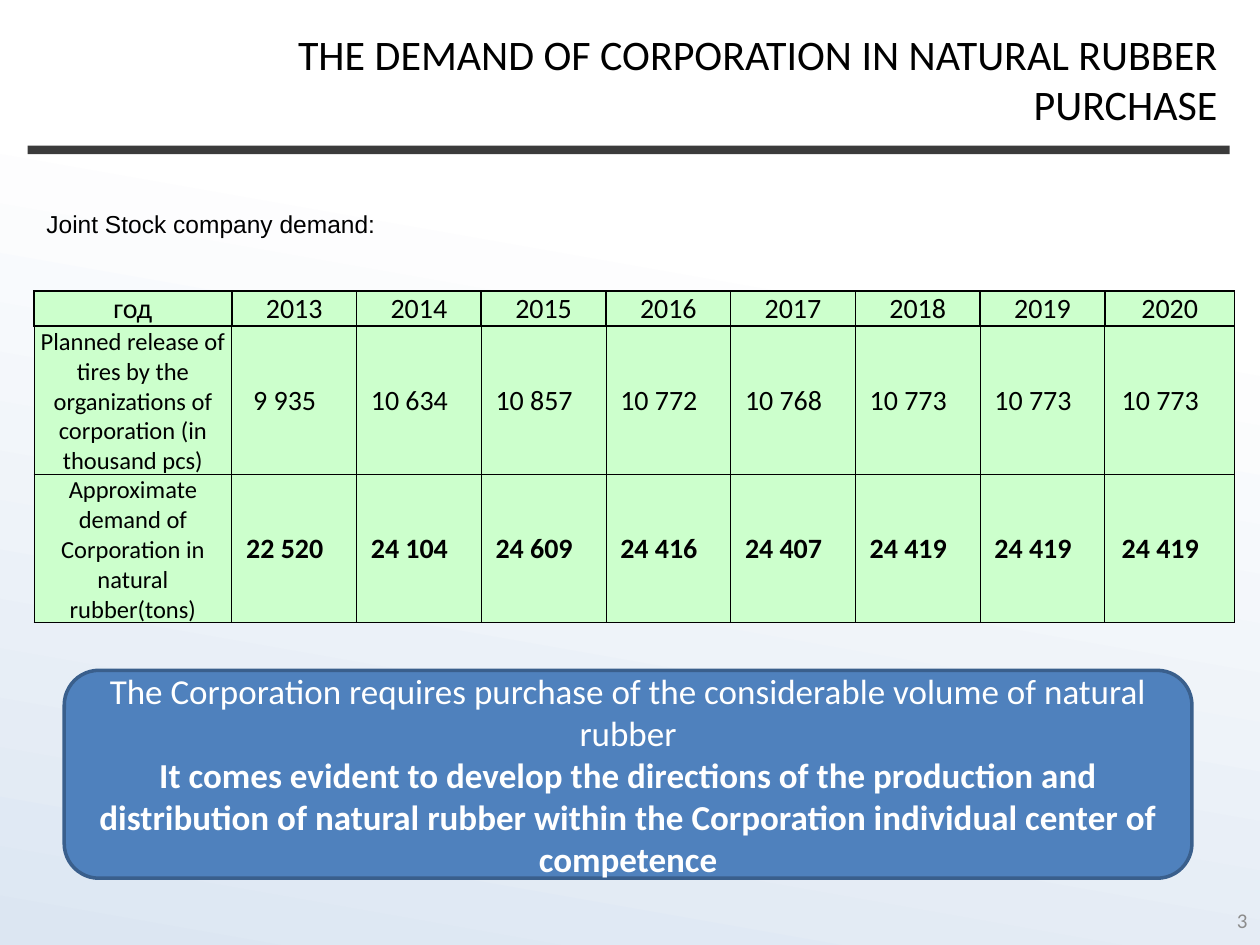
from lxml.etree import SubElement
from pptx import Presentation
from pptx.dml.color import RGBColor
from pptx.enum.shapes import MSO_CONNECTOR, MSO_SHAPE
from pptx.enum.text import MSO_ANCHOR, PP_ALIGN
from pptx.oxml.ns import qn
from pptx.util import Inches, Pt

BLACK = RGBColor(0x00, 0x00, 0x00)
WHITE = RGBColor(0xFF, 0xFF, 0xFF)
GREY = RGBColor(0x8C, 0x8C, 0x8C)
PALE_BLUE = RGBColor(0xDC, 0xE6, 0xF2)
GREEN = RGBColor(0xCC, 0xFF, 0xCC)
BLUE = RGBColor(0x4F, 0x81, 0xBD)
DARK_BLUE = RGBColor(0x3A, 0x5F, 0x8C)

# Content
TITLE = "THE DEMAND OF CORPORATION IN NATURAL RUBBER PURCHASE"
SUBTITLE = "Joint Stock company demand:"
YEARS = ["год"] + [str(year) for year in range(2013, 2021)]
RELEASE = ["Planned release of tires by the organizations of corporation (in thousand pcs)",
           "9 935", "10 634", "10 857", "10 772", "10 768", "10 773", "10 773", "10 773"]
DEMAND = ["Approximate demand of Corporation in natural rubber(tons)",
          "22 520", "24 104", "24 609", "24 416", "24 407", "24 419", "24 419", "24 419"]
EMPTY = [""] * len(YEARS)
CONCLUSIONS = [
    ("The Corporation requires purchase of the considerable volume of natural rubber", False),
    ("It comes evident to develop the directions of the production and distribution of "
     "natural rubber within the Corporation individual center of competence", True),
]
# Each row: texts, height, border widths in points (left, right, top, bottom)
ROWS = [
    (EMPTY, 0.24, (0, 0, 0, 1)),
    (YEARS, 0.24, (1, 1, 1, 1)),
    (RELEASE, 0.71, (0.5, 0.5, 1, 1)),
    (DEMAND, 0.71, (0.5, 0.5, 1, 0.5)),
    (EMPTY, 0.24, (0, 0, 0.5, 0)),
]
COLUMN_WIDTHS = [1.57] + [0.99] * 7 + [1.03]


def write(paragraph, text, size=16, color=BLACK, bold=False, font="Calibri",
          align=PP_ALIGN.CENTER, spacing=None):
    paragraph.alignment = align
    if spacing:
        paragraph.line_spacing = Pt(spacing)
    run = paragraph.add_run()
    run.text = text
    run.font.size = Pt(size)
    run.font.name = font
    run.font.bold = bold
    run.font.color.rgb = color


def add_label(box, text, anchor=MSO_ANCHOR.MIDDLE, **text_format):
    frame = slide.shapes.add_textbox(*map(Inches, box)).text_frame
    frame.word_wrap = True
    frame.vertical_anchor = anchor
    write(frame.paragraphs[0], text, **text_format)


def set_borders(cell, widths):
    properties = cell._tc.get_or_add_tcPr()
    for side, width in zip("LRTB", widths):
        edge = SubElement(properties, qn(f"a:ln{side}"), w=str(Pt(width)))
        if width:
            fill = SubElement(edge, qn("a:solidFill"))
            SubElement(fill, qn("a:srgbClr"), val=str(BLACK))
        else:
            SubElement(edge, qn("a:noFill"))


prs = Presentation()
prs.slide_width, prs.slide_height = Inches(10), Inches(7.5)
slide = prs.slides.add_slide(prs.slide_layouts[6])

# Background
backdrop = slide.background.fill
backdrop.gradient()
backdrop.gradient_angle = 260
for stop, position, color in zip(backdrop.gradient_stops, (0.28, 1), (WHITE, PALE_BLUE)):
    stop.position = position
    stop.color.rgb = color

# Title and its rule
rule = slide.shapes.add_connector(MSO_CONNECTOR.STRAIGHT, Inches(0.22), Inches(1.19),
                                  Inches(9.76), Inches(1.19))
rule.line.color.rgb = BLACK
rule.line.width = Pt(4.75)
rule_color = rule.line._ln.find(qn("a:solidFill")).find(qn("a:srgbClr"))
SubElement(rule_color, qn("a:alpha"), val="76000")
SubElement(rule._element.spPr, qn("a:effectLst"))
add_label((1.17, 0, 8.59, 1.25), TITLE, size=24, align=PP_ALIGN.RIGHT)

# Demand table
table = slide.shapes.add_table(len(ROWS), len(YEARS), Inches(0.27), Inches(2.07),
                               Inches(9.53), Inches(2.14)).table
table.first_row = table.horz_banding = False
for column, width in zip(table.columns, COLUMN_WIDTHS):
    column.width = Inches(width)
for r, (texts, height, borders) in enumerate(ROWS):
    table.rows[r].height = Inches(height)
    for c, text in enumerate(texts):
        cell = table.cell(r, c)
        is_value = c > 0 and texts in (RELEASE, DEMAND)
        is_label = c == 0 and texts in (RELEASE, DEMAND)
        cell.margin_left = cell.margin_top = Inches(0.01)
        cell.margin_right = Inches(0.16 if is_value else 0.01)
        cell.margin_bottom = 0
        cell.vertical_anchor = MSO_ANCHOR.MIDDLE if is_value else MSO_ANCHOR.BOTTOM
        set_borders(cell, borders)
        paragraph = cell.text_frame.paragraphs[0]
        if text:
            cell.fill.solid()
            cell.fill.fore_color.rgb = GREEN
            write(paragraph, text, size=14 if is_label else 16,
                  bold=is_value and texts is DEMAND)
        else:
            cell.fill.background()
            SubElement(paragraph._p, qn("a:endParaRPr"), sz="1000")
table.cell(0, 7).merge(table.cell(0, 8))

# Slide number and subtitle
add_label((7.67, 7.1, 2.33, 0.4), "3", size=12, color=GREY, align=PP_ALIGN.RIGHT)
add_label((0.27, 1.55, 3.7, 0.55), SUBTITLE, anchor=MSO_ANCHOR.TOP, size=14,
          font="Arial", align=PP_ALIGN.LEFT, spacing=20.9)

# Conclusion
conclusion = slide.shapes.add_shape(MSO_SHAPE.ROUNDED_RECTANGLE, Inches(0.51), Inches(5.32),
                                    Inches(8.95), Inches(1.65))
conclusion.shadow.inherit = False
conclusion.fill.solid()
conclusion.fill.fore_color.rgb = BLUE
conclusion.line.color.rgb = DARK_BLUE
conclusion.line.width = Pt(2)
frame = conclusion.text_frame
frame.word_wrap = True
frame.vertical_anchor = MSO_ANCHOR.MIDDLE
for i, (text, bold) in enumerate(CONCLUSIONS):
    paragraph = frame.add_paragraph() if i else frame.paragraphs[0]
    write(paragraph, text, size=20, color=WHITE, bold=bold)

prs.save("out.pptx")
